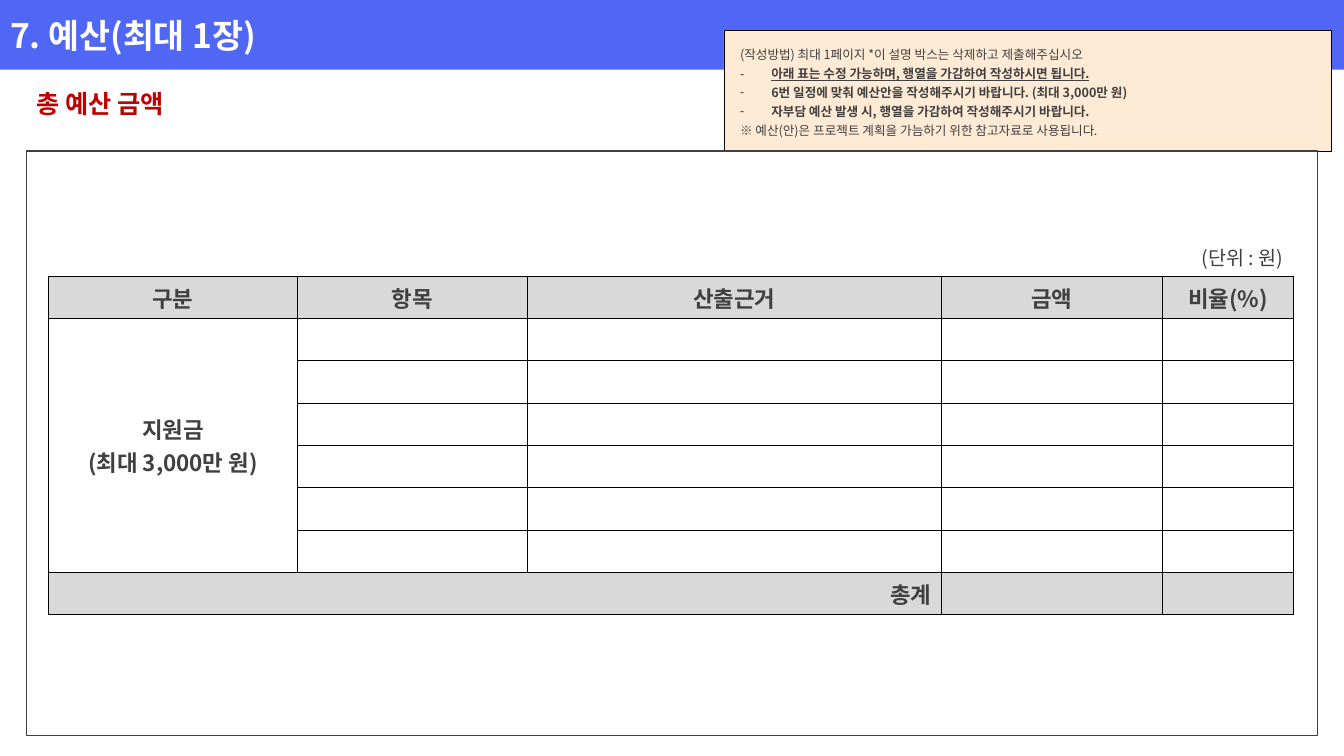
from lxml import etree
from pptx import Presentation
from pptx.dml.color import RGBColor
from pptx.enum.shapes import MSO_SHAPE
from pptx.enum.text import MSO_ANCHOR, MSO_AUTO_SIZE, PP_ALIGN
from pptx.oxml.ns import qn
from pptx.util import Inches, Pt

RECTANGLE = MSO_SHAPE.RECTANGLE
MIDDLE = MSO_ANCHOR.MIDDLE
NO_AUTOFIT = MSO_AUTO_SIZE.NONE
LEFT, CENTER, RIGHT = PP_ALIGN.LEFT, PP_ALIGN.CENTER, PP_ALIGN.RIGHT

FONT = "Noto Sans CJK KR"
COLORS = {
    "banner": "5067F5",
    "guide": "FFEAD5",
    "heading": "C00000",
    "text": "404040",
    "shade": "D9D9D9",
    "white": "FFFFFF",
    "black": "000000",
}

GUIDE_LINES = [  # text, bulleted, underlined
    ("(작성방법) 최대 1페이지 *이 설명 박스는 삭제하고 제출해주십시오", False, False),
    ("아래 표는 수정 가능하며, 행열을 가감하여 작성하시면 됩니다.", True, True),
    ("6번 일정에 맞춰 예산안을 작성해주시기 바랍니다. (최대 3,000만 원)", True, False),
    ("자부담 예산 발생 시, 행열을 가감하여 작성해주시기 바랍니다.", True, False),
    ("※ 예산(안)은 프로젝트 계획을 가늠하기 위한 참고자료로 사용됩니다.", False, False),
]
BUDGET_HEADERS = ["구분", "항목", "산출근거", "금액", "비율(%)"]
COLUMN_WIDTHS = [2.47, 2.28, 4.11, 2.19, 1.3]
ITEM_ROWS = 6
UNIT_ROW_HEIGHT, ROW_HEIGHT = 0.38, 0.42


def rgb(name):
    return RGBColor.from_string(COLORS[name])


class BudgetSlide:
    """Holds the slide and draws its elements in one style."""

    def __init__(self, presentation):
        self.slide = presentation.slides.add_slide(presentation.slide_layouts[1])

    def place(self, shape, left, top, width, height):
        shape.left, shape.top = Inches(left), Inches(top)
        shape.width, shape.height = Inches(width), Inches(height)

    def style(self, paragraph, size, color, bold=False, underline=None, align=LEFT):
        paragraph.alignment = align
        for run in paragraph.runs:
            font = run.font
            font.name, font.size = FONT, Pt(size)
            font.bold, font.underline = bold, underline
            font.color.rgb = rgb(color)
            east_asian = etree.SubElement(font._element, qn("a:ea"))
            east_asian.set("typeface", FONT)

    def banner(self, text):
        title = self.slide.shapes.title
        self.place(title, 0, 0, 13.33, 0.69)
        title.fill.solid()
        title.fill.fore_color.rgb = rgb("banner")
        frame = title.text_frame
        frame.text = text
        frame.vertical_anchor, frame.auto_size = MIDDLE, NO_AUTOFIT
        self.style(frame.paragraphs[0], 24, "white", bold=True)

    def guide_box(self, lines):
        box = self.slide.placeholders[1]
        self.place(box, 7.18, 0.3, 6.02, 1.2)
        box.fill.solid()
        box.fill.fore_color.rgb = rgb("guide")
        box.line.color.rgb = rgb("black")
        box.line.width = Pt(0.25)
        frame = box.text_frame
        frame.vertical_anchor, frame.auto_size = MIDDLE, NO_AUTOFIT
        frame.margin_left = Inches(0.16)
        frame.text = "\n".join(text for text, _, _ in lines)
        for paragraph, (_, bulleted, underlined) in zip(frame.paragraphs, lines):
            self.style(paragraph, 9, "text", bold=bulleted, underline=underlined)
            paragraph.line_spacing = 1.25
            paragraph.space_before = Pt(0)
            self.bullet(paragraph, bulleted)

    def bullet(self, paragraph, bulleted):
        properties = paragraph._p.get_or_add_pPr()
        indent = Inches(0.31) if bulleted else 0
        properties.set("marL", str(indent))
        properties.set("indent", str(-indent))
        if bulleted:
            etree.SubElement(properties, qn("a:buChar")).set("char", "-")
        else:
            etree.SubElement(properties, qn("a:buNone"))

    def heading(self, text):
        box = self.slide.shapes.add_textbox(
            Inches(0.26), Inches(0.69), Inches(12.81), Inches(0.53))
        frame = box.text_frame
        frame.word_wrap, frame.vertical_anchor = True, MIDDLE
        frame.text = text
        frame.paragraphs[0].line_spacing = 1.5
        self.style(frame.paragraphs[0], 18, "heading", bold=True)

    def content_frame(self):
        frame = self.slide.shapes.add_shape(
            RECTANGLE, Inches(0.26), Inches(1.5), Inches(12.81), Inches(5.8))
        frame.shadow.inherit = False
        frame.fill.background()
        frame.line.color.rgb = rgb("text")
        frame.line.width = Pt(1)

    def borders(self, cell, outer="black"):
        """Draw all four borders; the left, right and top ones take the outer colour."""
        properties = cell._tc.get_or_add_tcPr()
        for side in ("L", "R", "T", "B"):
            color = "black" if side == "B" else outer
            width = Pt(0.75) if color == "black" else Pt(1)
            line = etree.SubElement(properties, qn(f"a:ln{side}"), w=str(width))
            fill = etree.SubElement(line, qn("a:solidFill"))
            etree.SubElement(fill, qn("a:srgbClr"), val=COLORS[color])

    def cell_text(self, cell, text, size=16, bold=True, align=CENTER):
        cell.text_frame.text = text
        for paragraph in cell.text_frame.paragraphs:
            self.style(paragraph, size, "text", bold=bold, align=align)

    def budget_table(self):
        total_row = ITEM_ROWS + 2
        row_heights = [UNIT_ROW_HEIGHT] + [ROW_HEIGHT] * total_row
        table = self.slide.shapes.add_table(
            len(row_heights), len(COLUMN_WIDTHS), Inches(0.48), Inches(2.36),
            Inches(sum(COLUMN_WIDTHS)), Inches(sum(row_heights))).table
        table.first_row = table.horz_banding = False
        for column, width in zip(table.columns, COLUMN_WIDTHS):
            column.width = Inches(width)
        for index, (row, height) in enumerate(zip(table.rows, row_heights)):
            row.height = Inches(height)
            for cell in row.cells:
                cell.vertical_anchor = MIDDLE
                cell.margin_top = cell.margin_bottom = Inches(0.02)
                self.borders(cell, "white" if index == 0 else "black")
                if index == 0:
                    cell.fill.background()
                else:
                    cell.fill.solid()
                    shaded = index in (1, total_row)
                    cell.fill.fore_color.rgb = rgb("shade" if shaded else "white")

        unit, grant, total = table.cell(0, 0), table.cell(2, 0), table.cell(total_row, 0)
        unit.merge(table.cell(0, len(COLUMN_WIDTHS) - 1))
        grant.merge(table.cell(total_row - 1, 0))
        total.merge(table.cell(total_row, 2))
        self.cell_text(unit, "(단위 : 원)", size=14, bold=False, align=RIGHT)
        for column, header in enumerate(BUDGET_HEADERS):
            self.cell_text(table.cell(1, column), header)
        self.cell_text(grant, "지원금\n(최대 3,000만 원)")
        self.cell_text(total, "총계", align=RIGHT)


def main():
    presentation = Presentation()
    presentation.slide_width = Inches(13.33)
    presentation.slide_height = Inches(7.5)
    budget = BudgetSlide(presentation)
    budget.banner("7. 예산(최대 1장)")
    budget.guide_box(GUIDE_LINES)
    budget.heading("총 예산 금액")
    budget.content_frame()
    budget.budget_table()
    presentation.save("out.pptx")


if __name__ == "__main__":
    main()
